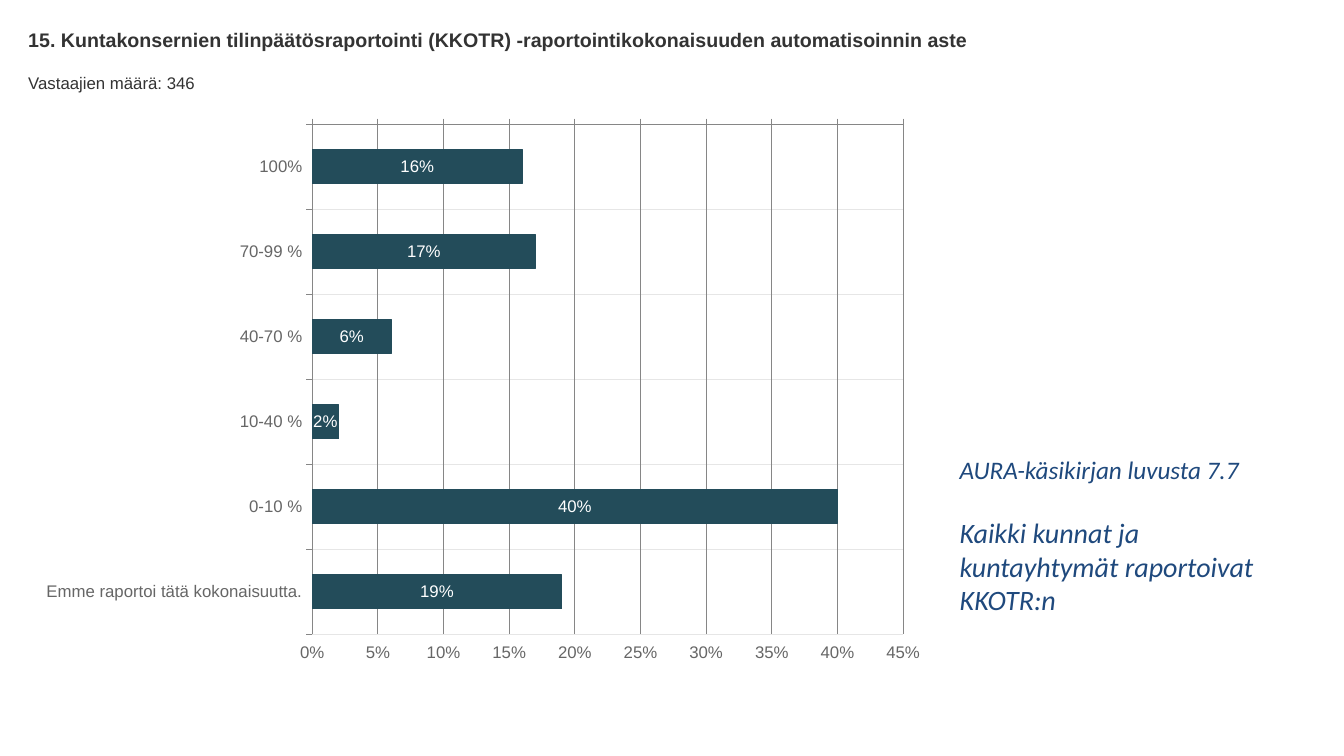
import dataclasses

import lxml.etree
import pptx
import pptx.chart.data
import pptx.dml.color
import pptx.enum.chart
import pptx.oxml
import pptx.oxml.ns
import pptx.util

WIDTH, HEIGHT = 13.33, 7.5


@dataclasses.dataclass(frozen=True)
class Theme:
    sans: str = "Arial"
    note: str = "Calibri"
    text: str = "333333"
    label: str = "666666"
    bar: str = "234C5A"
    on_bar: str = "FFFFFF"
    row_line: str = "E6E6E6"
    axis_line: str = "868686"
    accent: str = "1F497D"
    title_size: int = 14
    body_size: int = 12
    source_size: int = 18
    note_size: int = 20


THEME = Theme()
SHARES = {
    "0-10 %": 0.40,
    "10-40 %": 0.02,
    "40-70 %": 0.06,
    "70-99 %": 0.17,
    "100%": 0.16,
}
NOT_REPORTED = ("Emme raportoi tätä kokonaisuutta.", 0.19)


def rgb(color):
    return pptx.dml.color.RGBColor.from_string(color)


def box(left, top, width, height):
    """Turn percentages of the slide's size into lengths."""
    return [pptx.util.Inches(round(share * side / 100, 2))
            for share, side in zip((left, top, width, height),
                                   (WIDTH, HEIGHT, WIDTH, HEIGHT))]


def set_font(font, size, color, name=THEME.sans, bold=False, italic=False):
    font.name = name
    font.size = pptx.util.Pt(size)
    font.bold = bold
    font.italic = italic
    font.color.rgb = rgb(color)


def write(p, text, space_before=0, **style):
    if space_before:
        p.space_before = pptx.util.Pt(space_before)
    r = p.add_run()
    r.text = text
    set_font(r.font, **style)


def add_text_box(slide, area, inset=True):
    """Add a wrapping text box and return its text frame."""
    tf = slide.shapes.add_textbox(*box(*area)).text_frame
    tf.word_wrap = True
    if not inset:
        tf.margin_left = tf.margin_right = tf.margin_top = tf.margin_bottom = 0
    return tf


def set_line(line, color, width=0.75):
    line.color.rgb = rgb(color)
    line.width = pptx.util.Pt(width)


def style_axis(axis, grid_color, label_position):
    axis.has_major_gridlines = True
    set_line(axis.major_gridlines.format.line, grid_color)
    set_line(axis.format.line, THEME.axis_line)
    axis.major_tick_mark = pptx.enum.chart.XL_TICK_MARK.OUTSIDE
    axis.minor_tick_mark = pptx.enum.chart.XL_TICK_MARK.NONE
    axis.tick_label_position = label_position
    set_font(axis.tick_labels.font, THEME.body_size, THEME.label)


def place_plot(chart, **shares):
    """Fix the inner plot area, given as shares of the chart's size."""
    area = chart.plots[0]._element.getparent()
    for old in area.findall(pptx.oxml.ns.qn("c:layout")):
        area.remove(old)
    layout = lxml.etree.Element(pptx.oxml.ns.qn("c:layout"))
    manual = lxml.etree.SubElement(layout, pptx.oxml.ns.qn("c:manualLayout"))
    settings = {"layoutTarget": "inner", "xMode": "edge", "yMode": "edge", **shares}
    for tag, value in settings.items():
        child = lxml.etree.SubElement(manual, pptx.oxml.ns.qn("c:" + tag))
        child.set("val", str(value))
    area.insert(0, layout)


def add_bar_chart(slide, area, rows):
    data = pptx.chart.data.CategoryChartData(number_format="0%")
    data.categories = [name for name, _ in rows]
    data.add_series("Series 1", [share for _, share in rows])
    kind = pptx.enum.chart.XL_CHART_TYPE.BAR_CLUSTERED
    chart = slide.shapes.add_chart(kind, *box(*area), data).chart
    chart.has_legend = chart.has_title = False
    set_font(chart.font, THEME.body_size, THEME.label)

    position = pptx.enum.chart.XL_TICK_LABEL_POSITION
    style_axis(chart.category_axis, THEME.row_line, position.LOW)
    chart.category_axis.reverse_order = True
    values = chart.value_axis
    style_axis(values, THEME.axis_line, position.HIGH)
    values.minimum_scale, values.maximum_scale, values.major_unit = 0, 0.45, 0.05
    values.tick_labels.number_format = "0%"
    values.tick_labels.number_format_is_linked = False

    plot = chart.plots[0]
    plot.gap_width = 150
    plot.vary_by_categories = False
    bars = plot.series[0].format
    bars.fill.solid()
    bars.fill.fore_color.rgb = rgb(THEME.bar)
    set_line(bars.line, THEME.bar)
    plot.has_data_labels = True
    labels = plot.data_labels
    labels.show_value = True
    labels.number_format = "0%"
    labels.number_format_is_linked = False
    labels.position = pptx.enum.chart.XL_LABEL_POSITION.CENTER
    set_font(labels.font, THEME.body_size, THEME.on_bar)
    place_plot(chart, x=0.312, y=0.019, w=0.649, h=0.91)


def main():
    prs = pptx.Presentation()
    prs.slide_width = pptx.util.Inches(WIDTH)
    prs.slide_height = pptx.util.Inches(HEIGHT)
    slide = prs.slides.add_slide(prs.slide_layouts[6])

    title = add_text_box(slide, (2.1, 3.73, 95.95, 3.07), inset=False)
    write(title.paragraphs[0],
          "15. Kuntakonsernien tilinpäätösraportointi (KKOTR) "
          "-raportointikokonaisuuden automatisoinnin aste",
          size=THEME.title_size, color=THEME.text, bold=True)
    respondents = add_text_box(slide, (2.1, 9.6, 95.95, 2.67), inset=False)
    write(respondents.paragraphs[0], "Vastaajien määrä: 346",
          size=THEME.body_size, color=THEME.text)

    rows = list(reversed(SHARES.items())) + [NOT_REPORTED]
    add_bar_chart(slide, (2.1, 15.07, 67.74, 74.13), rows)

    handbook = add_text_box(slide, (70.67, 59.47, 23.63, 22.93))
    accent = {"color": THEME.accent, "name": THEME.note, "italic": True}
    write(handbook.paragraphs[0], "AURA-käsikirjan luvusta 7.7",
          size=THEME.source_size, **accent)
    write(handbook.add_paragraph(),
          "Kaikki kunnat ja kuntayhtymät raportoivat KKOTR:n",
          space_before=22, size=THEME.note_size, **accent)

    prs.save("out.pptx")


if __name__ == "__main__":
    main()
